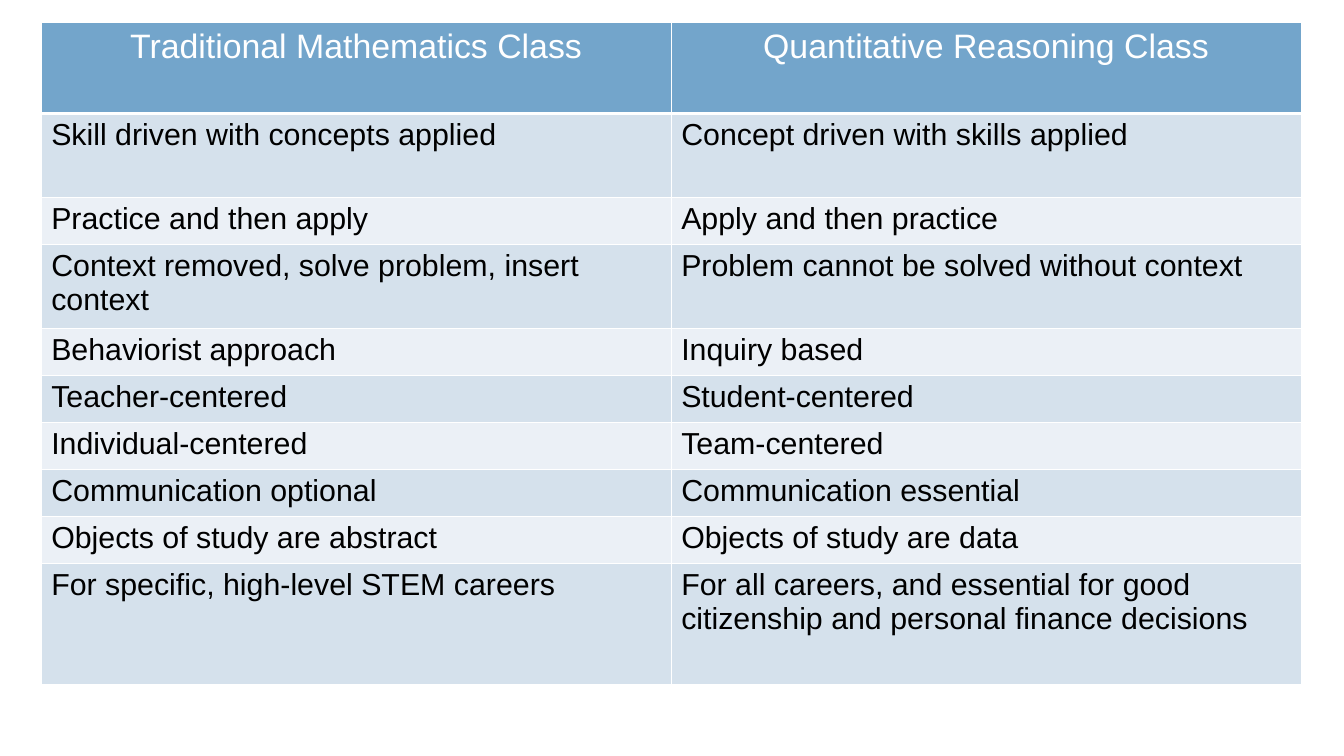
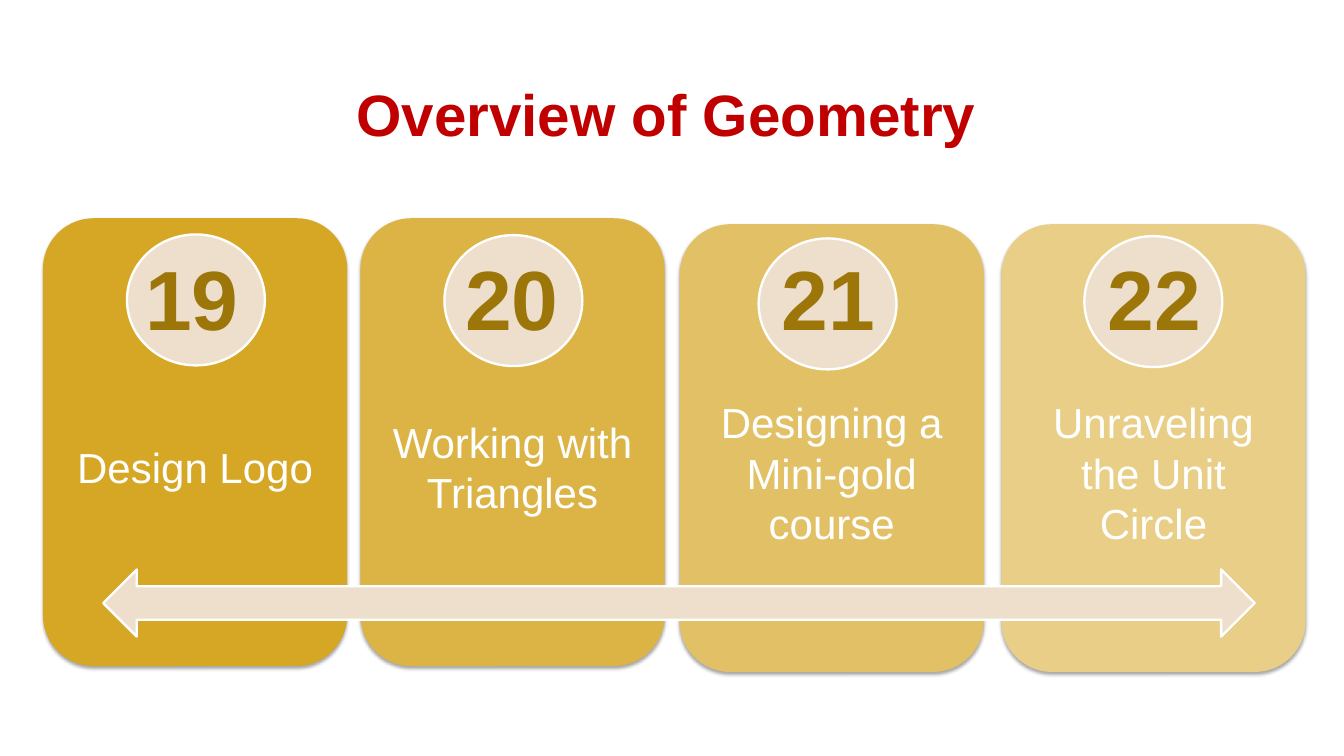
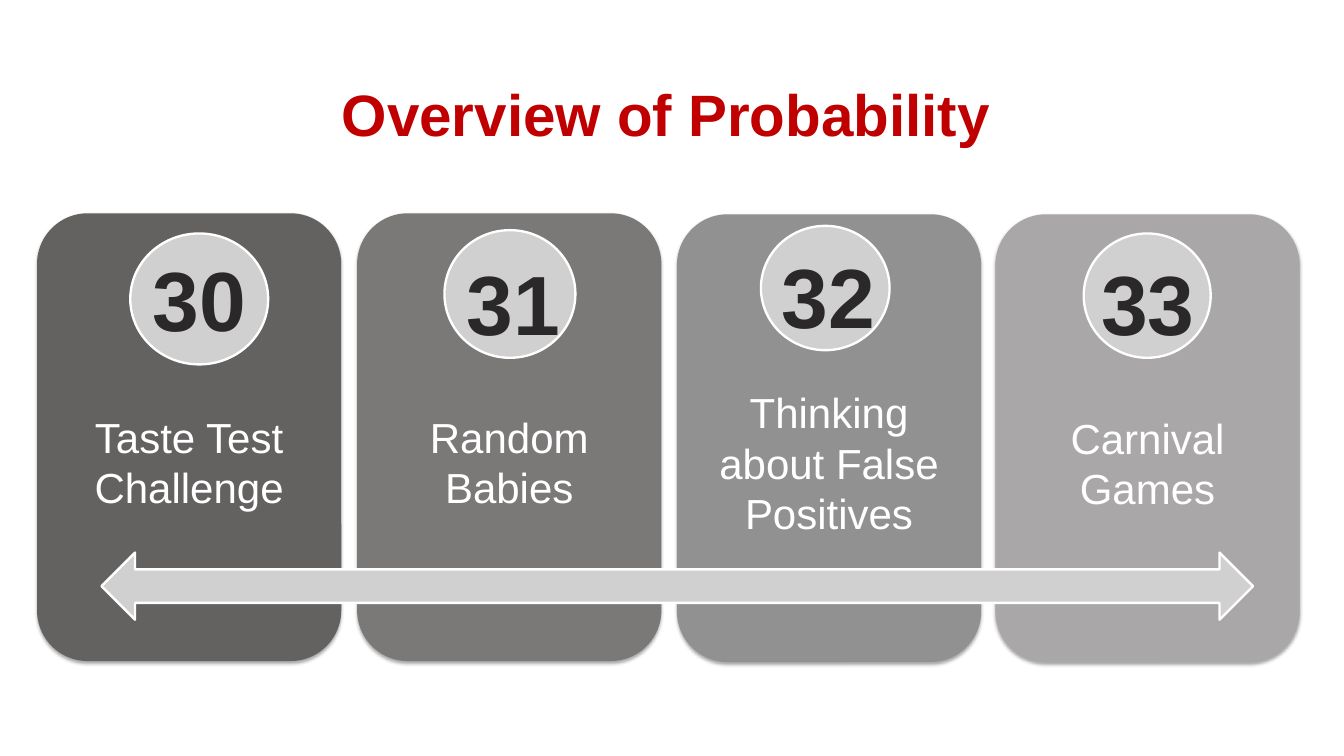
from dataclasses import dataclass

import lxml.etree
import pptx
import pptx.dml.color
import pptx.enum.shapes
import pptx.enum.text
import pptx.oxml.ns
import pptx.presentation
import pptx.shapes.autoshape
import pptx.slide
import pptx.table
import pptx.text.text
import pptx.util

Cm = pptx.util.Cm
Pt = pptx.util.Pt
Align = pptx.enum.text.PP_ALIGN
Anchor = pptx.enum.text.MSO_ANCHOR
Shape = pptx.enum.shapes.MSO_SHAPE

# Shared look
FONT = "Arial"
WHITE, BLACK, TITLE_RED = "FFFFFF", "000000", "C00000"
HEADER_FILL, BAND_FILLS = "73A5CB", ("D5E1EC", "EBF0F6")
TITLE_ONLY_LAYOUT, BLANK_LAYOUT = 5, 6
CARD_SIZE = (9.2, 13.54)
NUMBER_SIZE = (3.63, 3.33)
ARROW_SIZE = (34.82, 2.03)


@dataclass(frozen=True)
class Box:
    left: float
    top: float
    width: float
    height: float

    def lengths(self) -> list[pptx.util.Length]:
        return [Cm(value) for value in (self.left, self.top, self.width, self.height)]


@dataclass(frozen=True)
class LessonCard:
    number: str
    name: str
    fill: str
    corner: tuple[float, float]
    circle: Box
    number_corner: tuple[float, float]


@dataclass(frozen=True)
class Overview:
    title: str
    accent: str
    number_color: str
    arrow_corner: tuple[float, float]
    cards: tuple[LessonCard, ...]


COMPARISON = (
    ("Traditional Mathematics Class", "Quantitative Reasoning Class", 2.74),
    ("Skill driven with concepts applied", "Concept driven with skills applied", 2.54),
    ("Practice and then apply", "Apply and then practice", 1.42),
    ("Context removed, solve problem, insert context",
     "Problem cannot be solved without context", 2.54),
    ("Behaviorist approach", "Inquiry based", 1.42),
    ("Teacher-centered", "Student-centered", 1.42),
    ("Individual-centered", "Team-centered", 1.42),
    ("Communication optional", "Communication essential", 1.42),
    ("Objects of study are abstract", "Objects of study are data", 1.42),
    ("For specific, high-level STEM careers",
     "For all careers, and essential for good citizenship and personal finance decisions",
     3.66),
)

GEOMETRY = Overview("Overview of Geometry", "EEDFCC", "9D760A", (3.12, 17.22), (
    LessonCard("19", "Design Logo", "D6A725", (1.3, 6.6),
               Box(3.84, 7.09, 4.17, 3.96), (4.14, 7.34)),
    LessonCard("20", "Working with Triangles", "DCB445", (10.9, 6.6),
               Box(13.44, 7.11, 4.17, 3.96), (13.82, 7.34)),
    LessonCard("21", "Designing a Mini-gold course", "E2C166", (20.55, 6.78),
               Box(22.94, 7.21, 4.17, 3.96), (23.39, 7.34)),
    LessonCard("22", "Unraveling the Unit Circle", "E8CE86", (30.28, 6.78),
               Box(32.79, 7.14, 4.17, 3.96), (33.25, 7.34)),
))

PROBABILITY = Overview("Overview of Probability", "D1D0D0", "2A2828", (3.07, 16.71), (
    LessonCard("30", "Taste Test Challenge", "646161", (1.12, 6.45),
               Box(3.94, 7.06, 4.17, 3.96), (4.37, 7.37)),
    LessonCard("31", "Random Babies", "7B7878", (10.8, 6.45),
               Box(13.44, 6.96, 3.96, 3.86), (13.87, 7.47)),
    LessonCard("32", "Thinking about False Positives", "929191", (20.47, 6.48),
               Box(23.01, 6.83, 3.89, 3.76), (23.39, 7.26)),
    LessonCard("33", "Carnival Games", "A9A7A7", (30.1, 6.48),
               Box(32.77, 7.06, 3.84, 3.76), (33.05, 7.47)),
))


def color(value: str) -> pptx.dml.color.RGBColor:
    return pptx.dml.color.RGBColor.from_string(value)


def write(frame: pptx.text.text.TextFrame, text: str, *, size: float, fill: str,
          bold: bool = False, align: Align = Align.LEFT) -> None:
    paragraph = frame.paragraphs[0]
    paragraph.alignment = align
    run = paragraph.add_run()
    run.text = text
    run.font.name = FONT
    run.font.size = Pt(size)
    run.font.bold = bold
    run.font.color.rgb = color(fill)


def add_child(parent: lxml.etree._Element, tag: str, **attributes: str) -> lxml.etree._Element:
    return lxml.etree.SubElement(parent, pptx.oxml.ns.qn(tag), attributes)


def add_shape(slide: pptx.slide.Slide, kind: Shape, box: Box, fill: str,
              outline: str | None = None) -> pptx.shapes.autoshape.Shape:
    shape = slide.shapes.add_shape(kind, *box.lengths())
    shape.shadow.inherit = False
    shape.fill.solid()
    shape.fill.fore_color.rgb = color(fill)
    if outline:
        shape.line.color.rgb = color(outline)
        shape.line.width = Pt(2)
    else:
        shape.line.fill.background()
    return shape


def add_soft_shadow(shape: pptx.shapes.autoshape.Shape) -> None:
    effects = shape.element.spPr.find(pptx.oxml.ns.qn("a:effectLst"))
    shadow = add_child(effects, "a:outerShdw", blurRad=str(Pt(3.1)), dist=str(Pt(1.8)),
                       dir="5400000", rotWithShape="0")
    add_child(add_child(shadow, "a:srgbClr", val=BLACK), "a:alpha", val="35000")


def add_header_borders(cell: pptx.table._Cell) -> None:
    properties = cell._tc.get_or_add_tcPr()
    for tag, width in (("a:lnL", 1), ("a:lnR", 1), ("a:lnT", 1), ("a:lnB", 3)):
        line = add_child(properties, tag, w=str(Pt(width)))
        add_child(add_child(line, "a:solidFill"), "a:srgbClr", val=WHITE)


def add_comparison(presentation: pptx.presentation.Presentation) -> None:
    slide = presentation.slides.add_slide(presentation.slide_layouts[BLANK_LAYOUT])
    box = Box(1.25, 0.69, 38.1, sum(row[-1] for row in COMPARISON))
    table = slide.shapes.add_table(len(COMPARISON), 2, *box.lengths()).table
    for column in table.columns:
        column.width = Cm(box.width / 2)
    for row_index, (*texts, height) in enumerate(COMPARISON):
        table.rows[row_index].height = Cm(height)
        is_header = row_index == 0
        for column_index, text in enumerate(texts):
            cell = table.cell(row_index, column_index)
            cell.margin_left = cell.margin_right = Cm(0.3)
            cell.margin_top = cell.margin_bottom = Cm(0.15)
            if is_header:
                add_header_borders(cell)
            cell.fill.solid()
            cell.fill.fore_color.rgb = color(
                HEADER_FILL if is_header else BAND_FILLS[(row_index - 1) % 2])
            write(cell.text_frame, text, size=29 if is_header else 26,
                  fill=WHITE if is_header else BLACK,
                  align=Align.CENTER if is_header else Align.LEFT)


def add_title(slide: pptx.slide.Slide, text: str) -> None:
    title = slide.shapes.title
    title.left, title.top, title.width, title.height = Box(6.43, 2.31, 27.43, 2.16).lengths()
    frame = title.text_frame
    frame.margin_left = frame.margin_right = frame.margin_top = frame.margin_bottom = 0
    frame.vertical_anchor = Anchor.BOTTOM
    write(frame, text, size=50, fill=TITLE_RED, bold=True, align=Align.CENTER)


def add_card(slide: pptx.slide.Slide, card: LessonCard, overview: Overview) -> None:
    panel = add_shape(slide, Shape.ROUNDED_RECTANGLE, Box(*card.corner, *CARD_SIZE), card.fill)
    add_soft_shadow(panel)
    frame = panel.text_frame
    frame.word_wrap = True
    frame.vertical_anchor = Anchor.MIDDLE
    frame.margin_top = Cm(1.6)  # keeps the name below the number
    write(frame, card.name, size=36, fill=WHITE, align=Align.CENTER)

    add_shape(slide, Shape.OVAL, card.circle, overview.accent, WHITE)
    number = slide.shapes.add_textbox(*Box(*card.number_corner, *NUMBER_SIZE).lengths())
    number.text_frame.word_wrap = True
    write(number.text_frame, card.number, size=72, fill=overview.number_color, bold=True)


def add_overview(presentation: pptx.presentation.Presentation, overview: Overview) -> None:
    slide = presentation.slides.add_slide(presentation.slide_layouts[TITLE_ONLY_LAYOUT])
    add_title(slide, overview.title)
    for card in overview.cards:
        add_card(slide, card, overview)
    add_shape(slide, Shape.LEFT_RIGHT_ARROW, Box(*overview.arrow_corner, *ARROW_SIZE),
              overview.accent, WHITE)


def main() -> None:
    presentation = pptx.Presentation()
    presentation.slide_width = Cm(40.64)
    presentation.slide_height = Cm(22.86)
    add_comparison(presentation)
    for overview in (GEOMETRY, PROBABILITY):
        add_overview(presentation, overview)
    presentation.save("out.pptx")


if __name__ == "__main__":
    main()
